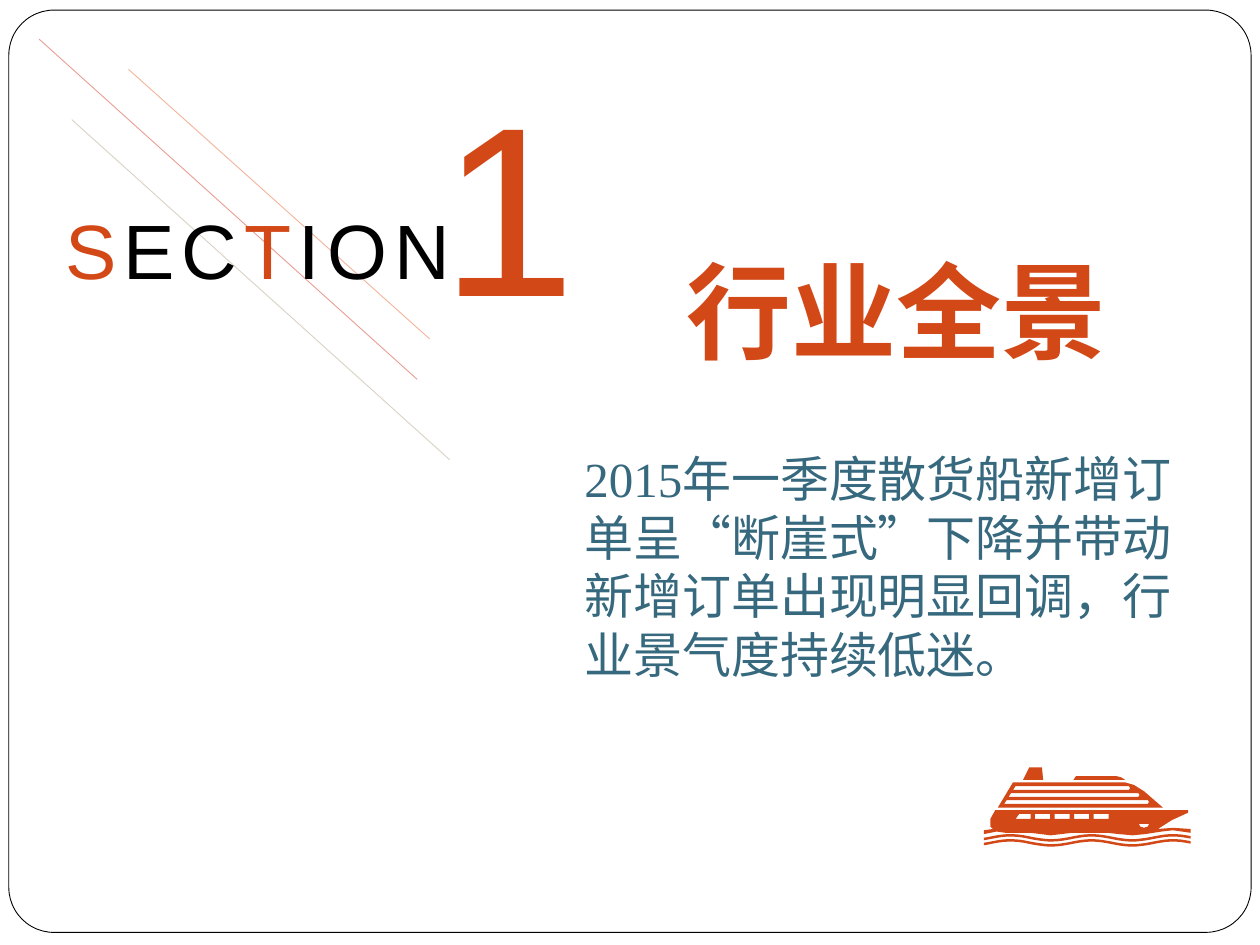
from dataclasses import dataclass, field
from math import cos, pi
from typing import Any

from lxml import etree
from pptx import Presentation
from pptx import util as u
from pptx.dml import color
from pptx.enum import lang, shapes, text
from pptx.oxml import ns

RUST, BLACK, WHITE, TEAL = "D34817", "000000", "FFFFFF", "36687E"
Point = tuple[float, float]


@dataclass
class Label:
    box: tuple[float, float, float, float]
    runs: list[tuple[str, str]]
    size: int
    face: str
    gap: int = 0
    bold: bool = False
    frame: dict[str, Any] = field(default_factory=dict)


@dataclass
class Stroke:
    start: Point
    end: Point
    tint: str


def inch(n: float) -> u.Length:
    return u.Cm(n * 2.54)


def rgb(code: str) -> color.RGBColor:
    return color.RGBColor.from_string(code)


def assign(item: Any, values: dict[str, Any]) -> None:
    for name, value in values.items():
        setattr(item, name, value)


def paint(shape: Any, tint: str) -> None:
    shape.shadow.inherit = False
    shape.fill.solid()
    shape.fill.fore_color.rgb = rgb(tint)


def write(tree: Any, label: Label) -> None:
    frame = tree.add_textbox(*map(inch, label.box)).text_frame
    assign(frame, {"word_wrap": True, **label.frame})
    para = frame.paragraphs[0]
    para.line_spacing = u.Pt(round(label.size * 1.2, 1))
    for words, tint in label.runs:
        run = para.add_run()
        run.text = words
        assign(run.font, {
            "size": u.Pt(label.size),
            "name": label.face,
            "bold": label.bold,
            "language_id": lang.MSO_LANGUAGE_ID.SIMPLIFIED_CHINESE,
        })
        run.font.color.rgb = rgb(tint)
        if label.gap:
            run.font._element.set("spc", str(label.gap * 100))


def rule(tree: Any, stroke: Stroke) -> None:
    ends = map(inch, (*stroke.start, *stroke.end))
    line = tree.add_connector(shapes.MSO_CONNECTOR.STRAIGHT, *ends)
    line.line.width = u.Pt(0.5)
    line.line.color.rgb = rgb(stroke.tint)
    etree.SubElement(line._element.spPr, ns.qn("a:effectLst"))


def outline(tree: Any, parts: list[list[Point]], tint: str) -> None:
    grid = [[(x * 1000, y * 1000) for x, y in part] for part in parts]
    pen = tree.build_freeform(*grid[0][0], scale=inch(1) / 1000)
    for i, part in enumerate(grid):
        if i:
            pen.move_to(*part[0])
        pen.add_line_segments(part[1:], close=True)
    shape = pen.convert_to_shape()
    paint(shape, tint)
    shape.line.fill.background()


def wave(mid: float) -> list[Point]:
    steps = [7.81 + 0.04 * i for i in range(42)]
    top = [(x, mid - 0.02 * cos(2 * pi * (x - 8.02) / 0.645)) for x in steps]
    return top + [(x, y + 0.02) for x, y in reversed(top)]


def pane(i: int) -> list[Point]:
    left = 8.06 + 0.155 * i
    slant = 0 if i else 0.03
    return [(left + slant, 6.46), (left, 6.5),
            (left + 0.12, 6.5), (left + 0.12, 6.46)]


def stripe(i: int) -> list[Point]:
    left, right, top = 8.06 - 0.035 * i, 8.97 + 0.075 * i, 6.24 + 0.055 * i
    return [(left, top), (left - 0.02, top + 0.03), (right - 0.01, top + 0.03),
            (right, top + 0.015), (right - 0.01, top)]


HULL = [(7.9, 6.43), (9.43, 6.43), (9.43, 6.45), (9.3, 6.51), (9.19, 6.58),
        (9.31, 6.57), (9.45, 6.58), (9.45, 6.61), (9.31, 6.59), (9.22, 6.6),
        (9.09, 6.62), (8.99, 6.63), (8.88, 6.62), (8.79, 6.61), (8.51, 6.61),
        (8.34, 6.63), (8.18, 6.61), (7.98, 6.61), (7.91, 6.6), (7.81, 6.62),
        (7.81, 6.59), (7.88, 6.58), (7.86, 6.56), (7.86, 6.5)]
DECK = [(8.04, 6.21), (8.93, 6.21), (9, 6.23), (9.08, 6.28),
        (9.23, 6.41), (7.92, 6.41)]
ROOF = [(8.54, 6.16), (8.86, 6.16), (8.9, 6.17), (8.93, 6.19), (8.52, 6.19)]
STACK = [(8.17, 6.09), (8.27, 6.09), (8.28, 6.19), (8.12, 6.19)]
PORT = [(9.04, 6.54), (9.05, 6.56), (9.08, 6.57), (9.11, 6.56), (9.12, 6.54)]
SHIP = [HULL, DECK, ROOF, STACK, PORT, wave(6.64), wave(6.68),
        *map(pane, range(5)), *map(stripe, range(3))]

STROKES = [
    Stroke((1.02, 0.55), (3.41, 2.69), "F4B39B"),
    Stroke((0.31, 0.31), (3.31, 3.01), "E99D93"),
    Stroke((0.57, 0.95), (3.57, 3.65), "DAD2C3"),
]
FREE = {"word_wrap": False}
GROW = {"auto_size": text.MSO_AUTO_SIZE.SHAPE_TO_FIT_TEXT}
DIGIT = Label((3.41, 0.39, 1.23, 2.42), [("1", RUST)], 138, "Arial", 4, frame=FREE)
SECTION = Label((0.42, 1.56, 3.31, 0.84),
                [("S", RUST), ("EC", BLACK), ("T", RUST), ("ION", BLACK)],
                44, "Arial", 4, frame=FREE)
TITLE = Label((5.35, 1.91, 3.91, 1.56), [("行业全景", RUST)], 60,
              "DejaVu Sans Mono", bold=True)
BODY = Label((4.54, 3.51, 5, 1.99),
             [("2015年一季度散货船新增订单呈“断崖式”下降并带动"
               "新增订单出现明显回调，行业景气度持续低迷。", TEAL)],
             28, "Times New Roman", frame=GROW)


def main() -> None:
    deck = Presentation()
    assign(deck, {"slide_width": inch(10), "slide_height": inch(7.5)})
    tree = deck.slides.add_slide(deck.slide_layouts[6]).shapes

    # Rounded page frame
    page = tree.add_shape(shapes.MSO_SHAPE.ROUNDED_RECTANGLE,
                          *map(inch, (0.07, 0.08, 9.86, 7.32)))
    page.adjustments[0] = 0.049
    paint(page, WHITE)
    page.line.width = u.Pt(0.5)
    page.line.color.rgb = rgb(BLACK)

    # Section mark with diagonal lines
    mark = tree.add_group_shape().shapes
    write(mark, DIGIT)
    for stroke in STROKES:
        rule(mark, stroke)
    write(mark, SECTION)

    # Title, summary and ship
    write(tree, TITLE)
    write(tree, BODY)
    outline(tree, SHIP, RUST)

    deck.save("out.pptx")


if __name__ == "__main__":
    main()
